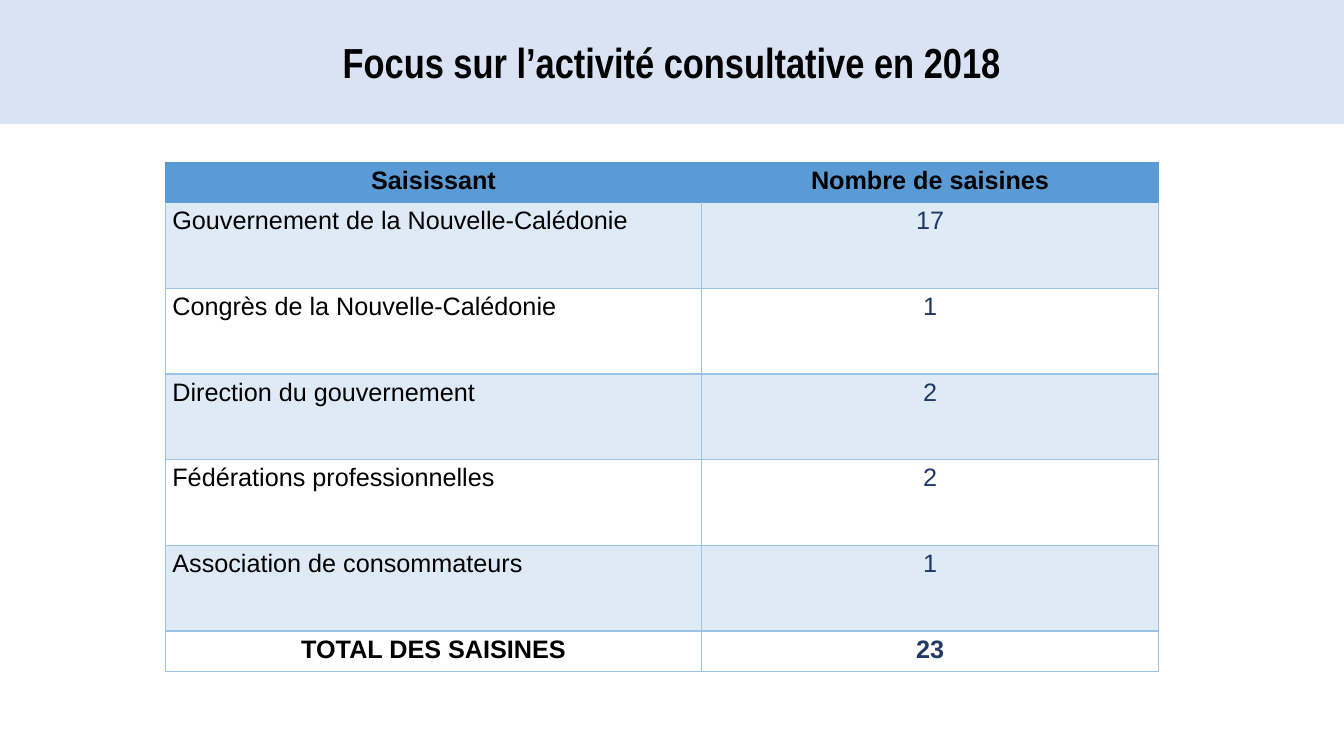
from pptx import Presentation
from pptx.dml.color import RGBColor
from pptx.enum.shapes import MSO_SHAPE
from pptx.enum.text import MSO_ANCHOR, PP_ALIGN
from pptx.oxml.ns import qn
from pptx.util import Inches, Pt
from lxml.etree import SubElement

BLACK = RGBColor(0x00, 0x00, 0x00)
WHITE = RGBColor(0xFF, 0xFF, 0xFF)
NAVY = RGBColor(0x1F, 0x38, 0x64)
BLUE = RGBColor(0x5B, 0x9B, 0xD5)
SKY = RGBColor(0x9C, 0xC2, 0xE5)
PALE = RGBColor(0xDE, 0xEA, 0xF6)
MIST = RGBColor(0xDA, 0xE3, 0xF3)

WIDE, HIGH = Inches(13.33), Inches(7.5)
LEFT, TOP = Inches(1.64), Inches(1.61)
COLS = (Inches(5.32), Inches(4.53))
SLIM, TALL = Inches(0.4), Inches(0.85)

ROWS = (
    ("Saisissant", "Nombre de saisines"),
    ("Gouvernement de la Nouvelle-Calédonie", "17"),
    ("Congrès de la Nouvelle-Calédonie", "1"),
    ("Direction du gouvernement", "2"),
    ("Fédérations professionnelles", "2"),
    ("Association de consommateurs", "1"),
    ("TOTAL DES SAISINES", "23"),
)


def write(frame, text, font, size, color, bold, align):
    frame.text = text
    para = frame.paragraphs[0]
    para.alignment = align
    run = para.runs[0].font
    run.name, run.size, run.bold = font, Pt(size), bold
    run.color.rgb = color
    return para


def add_banner(slide, text):
    banner = slide.shapes.add_shape(MSO_SHAPE.RECTANGLE, 0, 0, WIDE, Inches(1.23))
    banner.shadow.inherit = False
    banner.fill.solid()
    banner.fill.fore_color.rgb = MIST
    banner.line.fill.background()
    banner.text_frame.vertical_anchor = MSO_ANCHOR.MIDDLE
    write(banner.text_frame, text, "Arial Narrow", 30, BLACK, True, PP_ALIGN.CENTER)


def add_edge(cell, side, color):
    props = cell._tc.get_or_add_tcPr()
    line = SubElement(props, qn(f"a:ln{side}"), w=str(Pt(1)))
    fill = SubElement(line, qn("a:solidFill"))
    SubElement(fill, qn("a:srgbClr"), val=str(color))


def style_cell(cell, text, row, col):
    head, last = row == 0, row == len(ROWS) - 1
    edge = BLUE if head else SKY
    for side in "LRTB":
        add_edge(cell, side, BLUE if side == "T" and row == 1 else edge)
    cell.fill.solid()
    cell.fill.fore_color.rgb = BLUE if head else PALE if row % 2 else WHITE
    cell.margin_left = cell.margin_right = Inches(0.07)
    cell.margin_top = cell.margin_bottom = 0
    align = PP_ALIGN.CENTER if head or last or col else PP_ALIGN.LEFT
    color = NAVY if col and not head else BLACK
    para = write(cell.text_frame, text, "Arial", 18, color, head or last, align)
    para.line_spacing = 1.15
    para.space_after = Pt(12)


def add_grid(slide):
    highs = [SLIM] + [TALL] * (len(ROWS) - 2) + [SLIM]
    grid = slide.shapes.add_table(
        len(ROWS), len(COLS), LEFT, TOP, sum(COLS), sum(highs)
    ).table
    for col, width in enumerate(COLS):
        grid.columns[col].width = width
    for row, texts in enumerate(ROWS):
        grid.rows[row].height = highs[row]
        for col, text in enumerate(texts):
            style_cell(grid.cell(row, col), text, row, col)


def main():
    deck = Presentation()
    deck.slide_width, deck.slide_height = WIDE, HIGH
    slide = deck.slides.add_slide(deck.slide_layouts[6])
    add_banner(slide, "Focus sur l’activité consultative en 2018")
    add_grid(slide)
    deck.save("out.pptx")


if __name__ == "__main__":
    main()
